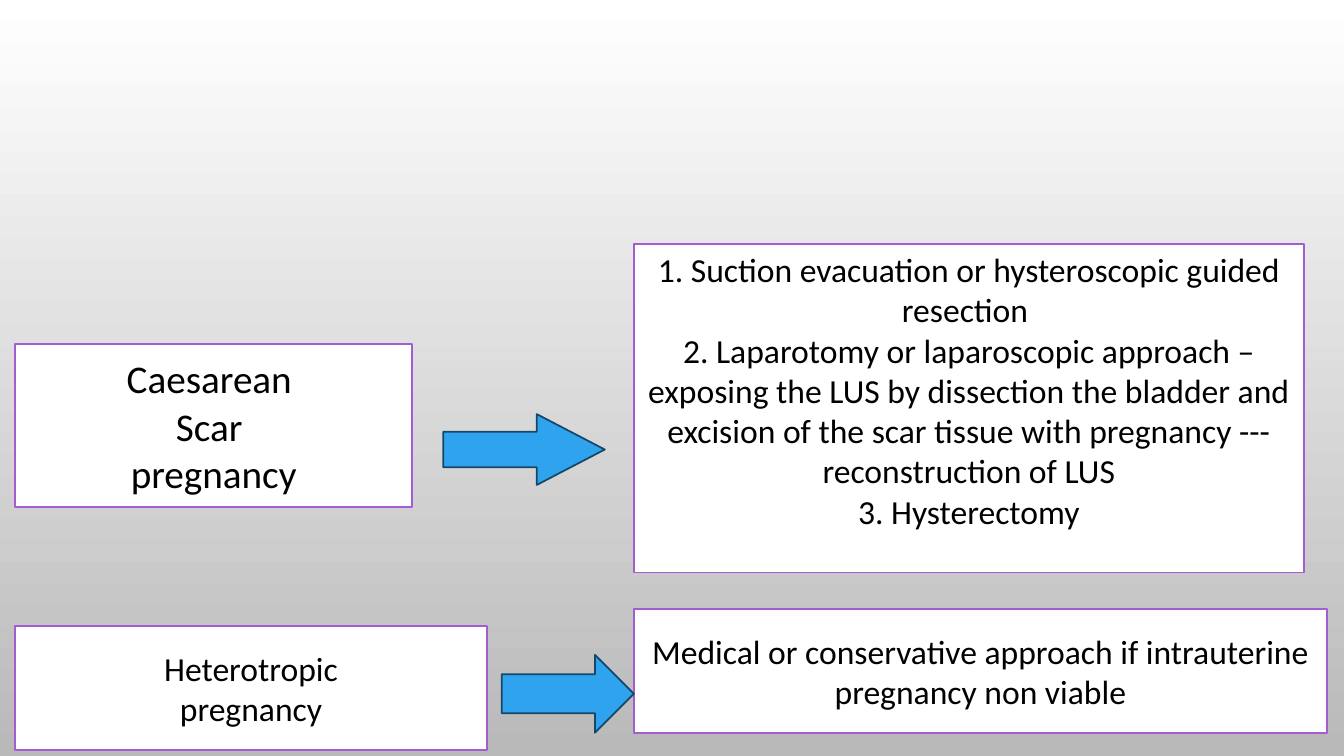
from pptx import Presentation
from pptx import util as u
from pptx.dml.color import RGBColor
from pptx.enum import shapes, text

WHITE = RGBColor(0xFF, 0xFF, 0xFF)
GREY = RGBColor(0xB9, 0xB9, 0xB9)
BLACK = RGBColor(0, 0, 0)
PURPLE = RGBColor(0xA3, 0x5D, 0xD1)
BLUE = RGBColor(0x2F, 0xA3, 0xEE)
NAVY = RGBColor(0x15, 0x47, 0x68)


class FlowSlide:
    font = "Calibri"
    line_width = 1.25

    def __init__(self, deck):
        self.slide = deck.slides.add_slide(deck.slide_layouts[6])

    def background(self, top, bottom):
        fill = self.slide.background.fill
        fill.gradient()
        fill.gradient_angle = 270
        for stop, color, position in zip(fill.gradient_stops, (top, bottom), (0, 1)):
            stop.color.rgb = color
            stop.position = position

    def shape(self, kind, place, fill, line):
        shape = self.slide.shapes.add_shape(kind, *(u.Pt(n) for n in place))
        shape.shadow.inherit = False
        shape.fill.solid()
        shape.fill.fore_color.rgb = fill
        shape.line.color.rgb = line
        shape.line.width = u.Pt(self.line_width)
        return shape

    def box(self, place, lines, size=24, anchor=text.MSO_ANCHOR.MIDDLE):
        box = self.shape(shapes.MSO_SHAPE.RECTANGLE, place, WHITE, PURPLE)
        frame = box.text_frame
        frame.word_wrap = True
        frame.vertical_anchor = anchor
        for index, line in enumerate(lines):
            para = frame.add_paragraph() if index else frame.paragraphs[0]
            para.alignment = text.PP_ALIGN.CENTER
            span = para.add_run()
            span.text = line
            span.font.name = self.font
            span.font.size = u.Pt(size)
            span.font.color.rgb = BLACK

    def arrow(self, place, head=0.5):
        arrow = self.shape(shapes.MSO_SHAPE.RIGHT_ARROW, place, BLUE, NAVY)
        arrow.adjustments[1] = head


def main():
    deck = Presentation()
    deck.slide_width = u.Pt(960)
    deck.slide_height = u.Pt(540)

    page = FlowSlide(deck)
    page.background(WHITE, GREY)

    left, right = 10.8, 452.6
    page.box((left, 245.5, 283.7, 116.6), ["Caesarean ", "Scar ", "pregnancy"], size=28)
    page.box((right, 174.2, 478.8, 234.7), [
        "1. Suction evacuation or hysteroscopic guided resection ",
        "2. Laparotomy or laparoscopic approach – exposing the LUS by dissection "
        "the bladder and excision of the scar tissue with pregnancy --- "
        "reconstruction of LUS",
        "3. Hysterectomy",
    ], anchor=text.MSO_ANCHOR.TOP)
    page.box((left, 447.1, 337, 88.6), ["Heterotropic", "pregnancy"])
    page.box((right, 434.9, 495.4, 88.6), [
        "Medical or conservative approach if intrauterine pregnancy non viable",
    ])

    page.arrow((316.6, 295.8, 115.4, 50.6), head=0.96)
    page.arrow((358.4, 467.8, 94.4, 55.6))

    deck.save("out.pptx")


if __name__ == "__main__":
    main()
